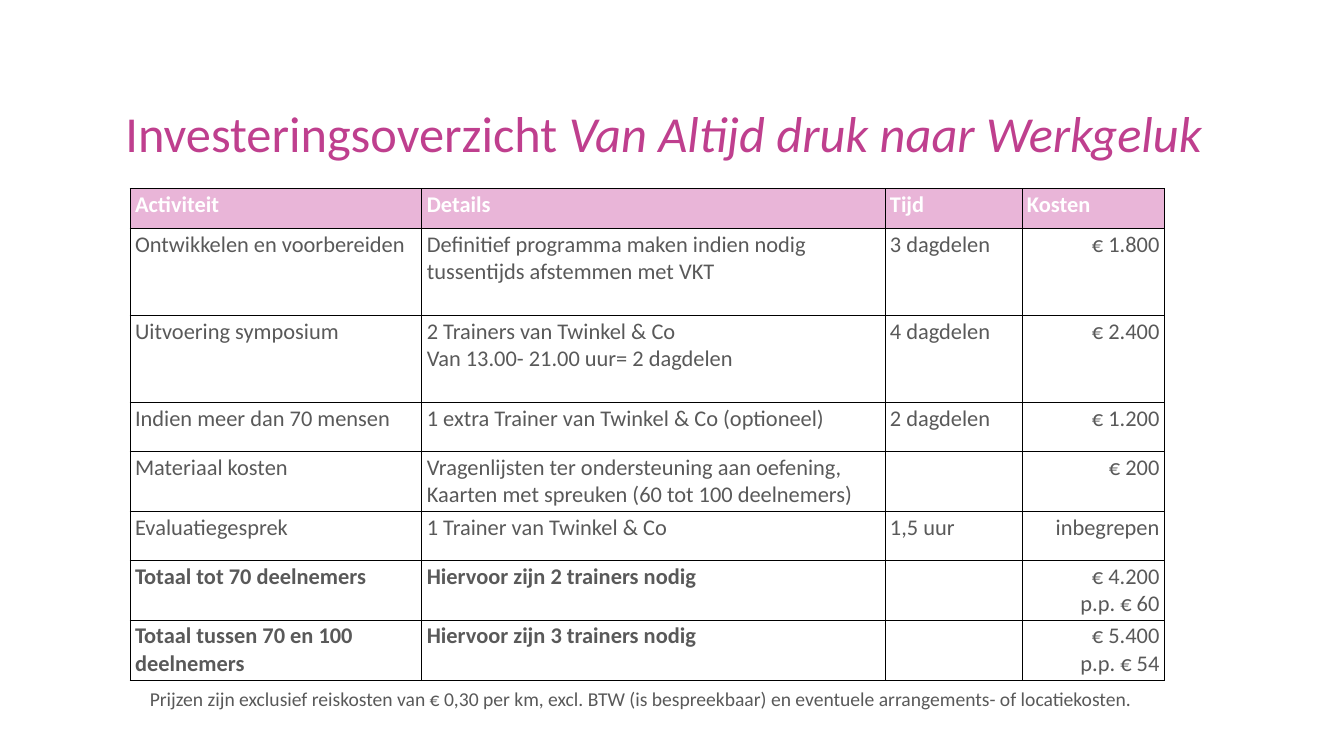
from lxml import etree
from pptx import Presentation
from pptx.dml.color import RGBColor
from pptx.enum import text
from pptx.oxml import ns
from pptx.util import Inches, Pt

FONT = "Calibri"
MAGENTA = RGBColor(0xBF, 0x3F, 0x8E)
PINK = RGBColor(0xE9, 0xB5, 0xD8)
WHITE = RGBColor(0xFF, 0xFF, 0xFF)
GREY = RGBColor(0x59, 0x59, 0x59)
BORDER = "000000"

COLUMN_WIDTHS = [5.79, 9.19, 2.72, 2.83]
ROW_HEIGHTS = [0.79, 1.73, 1.73, 0.97, 1.19, 0.97, 1.18, 1.19]
ROWS = [
    ["Activiteit", "Details", "Tijd", "Kosten"],
    ["Ontwikkelen en voorbereiden",
     "Definitief programma maken indien nodig tussentijds afstemmen met VKT",
     "3 dagdelen", "€ 1.800"],
    ["Uitvoering symposium",
     "2 Trainers van Twinkel & Co\nVan 13.00- 21.00 uur= 2 dagdelen",
     "4 dagdelen", "€ 2.400"],
    ["Indien meer dan 70 mensen", "1 extra Trainer van Twinkel & Co (optioneel)",
     "2 dagdelen", "€ 1.200"],
    ["Materiaal kosten",
     "Vragenlijsten ter ondersteuning aan oefening, "
     "Kaarten met spreuken (60 tot 100 deelnemers)",
     "", "€ 200"],
    ["Evaluatiegesprek", "1 Trainer van Twinkel & Co", "1,5 uur", "inbegrepen"],
    ["Totaal tot 70 deelnemers", "Hiervoor zijn 2 trainers nodig",
     "", "€ 4.200\np.p. € 60"],
    ["Totaal tussen 70 en 100 deelnemers", "Hiervoor zijn 3 trainers nodig",
     "", "€ 5.400\np.p. € 54"],
]
FIRST_TOTAL_ROW = 6
COST_COLUMN = 3


def format_font(font, size, color, bold=False, italic=False):
    font.name = FONT
    font.size = Pt(size)
    font.color.rgb = color
    font.bold = bold
    font.italic = italic


def add_text_box(slide, left, top, width, height):
    shape = slide.shapes.add_textbox(
        Inches(left), Inches(top), Inches(width), Inches(height))
    frame = shape.text_frame
    frame.word_wrap = True
    frame.margin_top = frame.margin_bottom = 0
    frame.vertical_anchor = text.MSO_ANCHOR.MIDDLE
    return frame


def add_title(slide, left, top, width, height):
    paragraph = add_text_box(slide, left, top, width, height).paragraphs[0]
    for words, italic in [("Investeringsoverzicht ", False),
                          ("Van Altijd druk naar Werkgeluk", True)]:
        run = paragraph.add_run()
        run.text = words
        format_font(run.font, 72, MAGENTA, italic=italic)


def add_borders(cell):
    properties = cell._tc.get_or_add_tcPr()
    for position, side in enumerate(("a:lnL", "a:lnR", "a:lnT", "a:lnB")):
        line = etree.Element(ns.qn(side), w=str(Pt(1)))
        fill = etree.SubElement(line, ns.qn("a:solidFill"))
        etree.SubElement(fill, ns.qn("a:srgbClr"), val=BORDER)
        properties.insert(position, line)


def fill_cell(cell, words, row, column):
    header = row == 0
    cell.text_frame.text = words
    if header:
        cell.fill.solid()
        cell.fill.fore_color.rgb = PINK
    else:
        cell.fill.background()
    add_borders(cell)
    bold = header or (row >= FIRST_TOTAL_ROW and column != COST_COLUMN)
    for paragraph in cell.text_frame.paragraphs:
        if column == COST_COLUMN and not header:
            paragraph.alignment = text.PP_ALIGN.RIGHT
        format_font(paragraph.font, 32, WHITE if header else GREY, bold)
        for run in paragraph.runs:
            format_font(run.font, 32, WHITE if header else GREY, bold)


def add_cost_table(slide, left, top):
    table = slide.shapes.add_table(
        len(ROWS), len(COLUMN_WIDTHS), Inches(left), Inches(top),
        Inches(sum(COLUMN_WIDTHS)), Inches(sum(ROW_HEIGHTS))).table
    table.first_row = table.horz_banding = False
    for column, width in zip(table.columns, COLUMN_WIDTHS):
        column.width = Inches(width)
    for row, height in zip(table.rows, ROW_HEIGHTS):
        row.height = Inches(height)
    for row, values in enumerate(ROWS):
        for column, words in enumerate(values):
            fill_cell(table.cell(row, column), words, row, column)


def add_footnote(slide, left, top, width, height):
    paragraph = add_text_box(slide, left, top, width, height).paragraphs[0]
    paragraph.text = (
        "Prijzen zijn exclusief reiskosten van € 0,30 per km, excl. BTW "
        "(is bespreekbaar) en eventuele arrangements- of locatiekosten.")
    paragraph.alignment = text.PP_ALIGN.CENTER
    format_font(paragraph.runs[0].font, 28, GREY)


def main():
    presentation = Presentation()
    presentation.slide_width = Inches(26.67)
    presentation.slide_height = Inches(15)
    slide = presentation.slides.add_slide(presentation.slide_layouts[6])
    # Title
    add_title(slide, 2.39, 2.02, 23.06, 1.22)
    # Cost overview
    add_cost_table(slide, 2.58, 3.74)
    # Conditions below the table
    add_footnote(slide, 2.72, 13.62, 19.97, 0.48)
    presentation.save("out.pptx")


if __name__ == "__main__":
    main()
